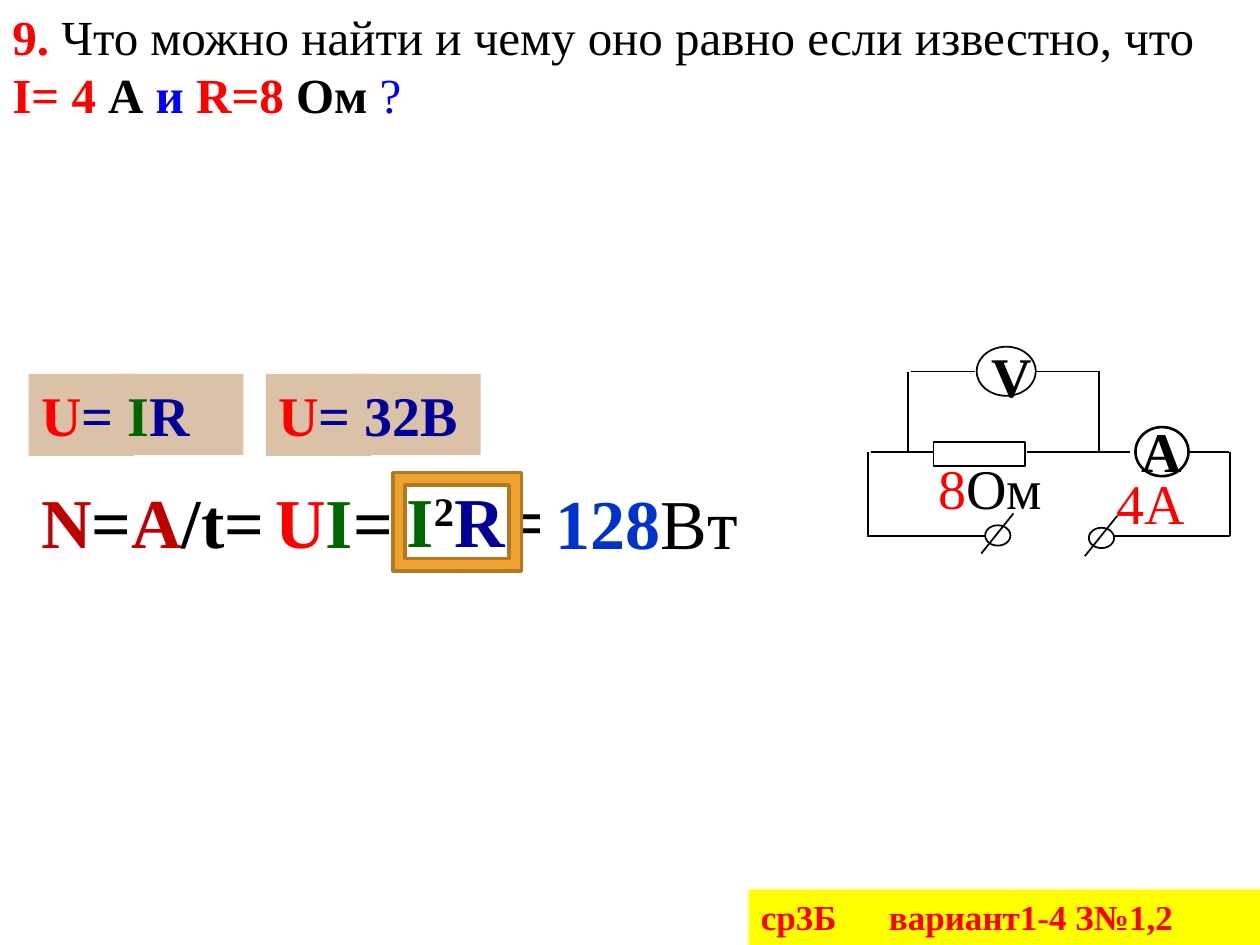
from dataclasses import dataclass

import pptx
import pptx.dml.color
import pptx.enum.shapes
import pptx.enum.text
import pptx.oxml
import pptx.oxml.ns
import pptx.util
from pptx.util import Cm

SHAPE = pptx.enum.shapes.MSO_SHAPE
ALIGN = pptx.enum.text.PP_ALIGN


@dataclass(frozen=True)
class Theme:
    font: str = "Times New Roman"
    black: str = "000000"
    white: str = "FFFFFF"
    red: str = "FF0000"
    dark_red: str = "C00000"
    blue: str = "0000FF"
    navy: str = "000099"
    royal: str = "0033CC"
    green: str = "006600"
    beige: str = "DBC1A7"
    yellow: str = "FFFF00"
    orange: str = "F0A22E"
    brown: str = "B27822"
    question: int = 28
    formula: int = 40
    label: int = 32
    note: int = 20
    wire: float = 1


THEME = Theme()


def rgb(value):
    return pptx.dml.color.RGBColor.from_string(value)


class SlideBuilder:
    def __init__(self, slide, theme):
        self.slide = slide
        self.theme = theme

    def fill_text(self, frame, parts, size, after=0, align=None, tab=None):
        """Fill a frame with (text, colour, bold) parts, plus an optional baseline."""
        paragraph = frame.paragraphs[0]
        if tab:
            properties = paragraph._p.get_or_add_pPr()
            tabs = pptx.oxml.parse_xml(
                f'<a:tabLst {pptx.oxml.ns.nsdecls("a")}>'
                f'<a:tab pos="{tab}" algn="l"/></a:tabLst>')
            properties.append(tabs)
        paragraph.alignment = align or ALIGN.LEFT
        if after:
            paragraph.space_after = pptx.util.Pt(after)
        for text, color, bold, *baseline in parts:
            run = paragraph.add_run()
            run.text = text
            run.font.name = self.theme.font
            run.font.size = pptx.util.Pt(size)
            run.font.bold = bold
            run.font.color.rgb = rgb(color)
            if baseline:
                run.font._element.set("baseline", str(baseline[0] * 1000))

    def text(self, box, parts, size, wrap=True, **style):
        frame = self.slide.shapes.add_textbox(*map(Cm, box)).text_frame
        frame.word_wrap = wrap
        if not wrap:
            frame.auto_size = pptx.enum.text.MSO_AUTO_SIZE.SHAPE_TO_FIT_TEXT
        self.fill_text(frame, parts, size, **style)

    def shape(self, kind, box, fill=None, line=None, width=THEME.wire):
        shape = self.slide.shapes.add_shape(kind, *map(Cm, box))
        shape.shadow.inherit = False
        if fill:
            shape.fill.solid()
            shape.fill.fore_color.rgb = rgb(fill)
        else:
            shape.fill.background()
        if line:
            shape.line.color.rgb = rgb(line)
            shape.line.width = pptx.util.Pt(width)
        else:
            shape.line.fill.background()
        return shape

    def panel(self, box, fill, parts, size, **style):
        """Draw a filled rectangle with text set from its top left."""
        frame = self.shape(SHAPE.RECTANGLE, box, fill).text_frame
        frame.word_wrap = True
        frame.vertical_anchor = pptx.enum.text.MSO_ANCHOR.TOP
        self.fill_text(frame, parts, size, **style)

    def wire(self, *ends):
        wire = self.slide.shapes.add_connector(
            pptx.enum.shapes.MSO_CONNECTOR.STRAIGHT, *map(Cm, ends))
        wire.line.color.rgb = rgb(self.theme.black)
        wire.line.width = pptx.util.Pt(self.theme.wire)
        wire._element.spPr.append(
            pptx.oxml.parse_xml(f'<a:effectLst {pptx.oxml.ns.nsdecls("a")}/>'))


def add_question(builder):
    t = builder.theme
    builder.text((0, 0, 25.4, 6.76), [
        ("9. ", t.red, True),
        ("Что можно найти и чему оно равно если известно, что ", t.black, False),
        ("I= 4 ", t.red, True), ("А", t.black, True), (" и ", t.blue, True),
        ("R=8 ", t.red, True), ("Ом ", t.black, True), ("?", t.blue, False),
    ], t.question, after=10)


def add_formulas(builder):
    t = builder.theme
    voltages = [
        (0.58, [("I", t.green, True), ("R", t.navy, True)]),
        (5.36, [("32В", t.navy, True)]),
    ]
    for left, value in voltages:
        builder.panel((left, 7.54, 2.13, 1.65), t.beige,
                      [("U", t.red, True), ("=", t.navy, True)], t.label)
        builder.panel((left + 1.74, 7.54, 2.59, 1.63), t.beige, value, t.label)

    equals = ("=", t.black, True)
    power_terms = [
        (0.58, 9.53, 5.41, [("N", t.dark_red, True), equals,
                            ("A", t.dark_red, True), ("/t=", t.black, True)]),
        (4.95, 9.53, 3.28, [(" ", t.black, True), ("U", t.red, True),
                            ("I", t.green, True), equals]),
        (7.95, 9.5, 3.38, [("I", t.green, True), ("2", t.black, True, 30),
                           ("R", t.navy, True), equals]),
        (10.95, 9.55, 4.22, [("128", t.royal, True), ("Вт", t.black, False)]),
    ]
    for left, top, width, parts in power_terms:
        builder.text((left, top, width, 1.96), parts, t.formula, wrap=False)


def add_circuit(builder):
    t = builder.theme
    builder.shape(SHAPE.RECTANGLE, (18.82, 8.91, 1.85, 0.48), line=t.black)
    builder.text((22.2, 8.28, 2.46, 2.16), [("А", t.black, True)], t.label,
                 after=10, align=ALIGN.CENTER)
    builder.shape(SHAPE.OVAL, (22.89, 8.61, 1.07, 0.99), line=t.black, width=1.5)
    builder.text((19.74, 6.76, 2.06, 1.57), [("V", t.black, True)], t.label, after=10)
    builder.shape(SHAPE.OVAL, (19.69, 6.99, 1.19, 0.99), line=t.black)

    upper, middle, lower = 7.49, 9.12, 10.8
    for start, end, level in [
        (18.36, 19.66, upper), (20.88, 22.17, upper),
        (17.55, 18.82, middle), (20.7, 21.97, middle),
        (21.97, 22.78, middle), (23.95, 24.77, middle),
        (17.48, 20.07, lower), (22.17, 24.79, lower),
    ]:
        builder.wire(start, level, end, level)
    for x, top, bottom in [(18.31, upper, middle), (22.15, upper, middle),
                           (17.5, middle, lower), (24.79, middle, lower)]:
        builder.wire(x, top, x, bottom)

    for left, top in [(21.95, 10.64), (19.86, 10.59)]:
        builder.shape(SHAPE.OVAL, (left, top, 0.51, 0.41), t.white, t.black)
        builder.wire(left - 0.08, top + 0.57, left + 0.57, top - 0.24)

    builder.text((18.67, 9.02, 3.18, 1.32),
                 [("8", t.red, False), ("Ом", t.black, False)], t.label, after=10)
    builder.text((22.25, 9.32, 2.57, 1.32), [("4А", t.red, False)], t.label, after=10)


def main():
    deck = pptx.Presentation()
    deck.slide_width, deck.slide_height = Cm(25.4), Cm(19.05)
    builder = SlideBuilder(deck.slides.add_slide(deck.slide_layouts[6]), THEME)
    add_question(builder)
    add_formulas(builder)
    add_circuit(builder)
    builder.shape(SHAPE.FRAME, (7.92, 9.53, 2.59, 1.98), THEME.orange, THEME.brown, 2)
    builder.panel((15.09, 17.93, 10.31, 1.12), THEME.yellow,
                  [("ср3Б\tвариант1-4 З№1,2", THEME.red, True)], THEME.note, tab=Cm(2.58))
    deck.save("out.pptx")


if __name__ == "__main__":
    main()
